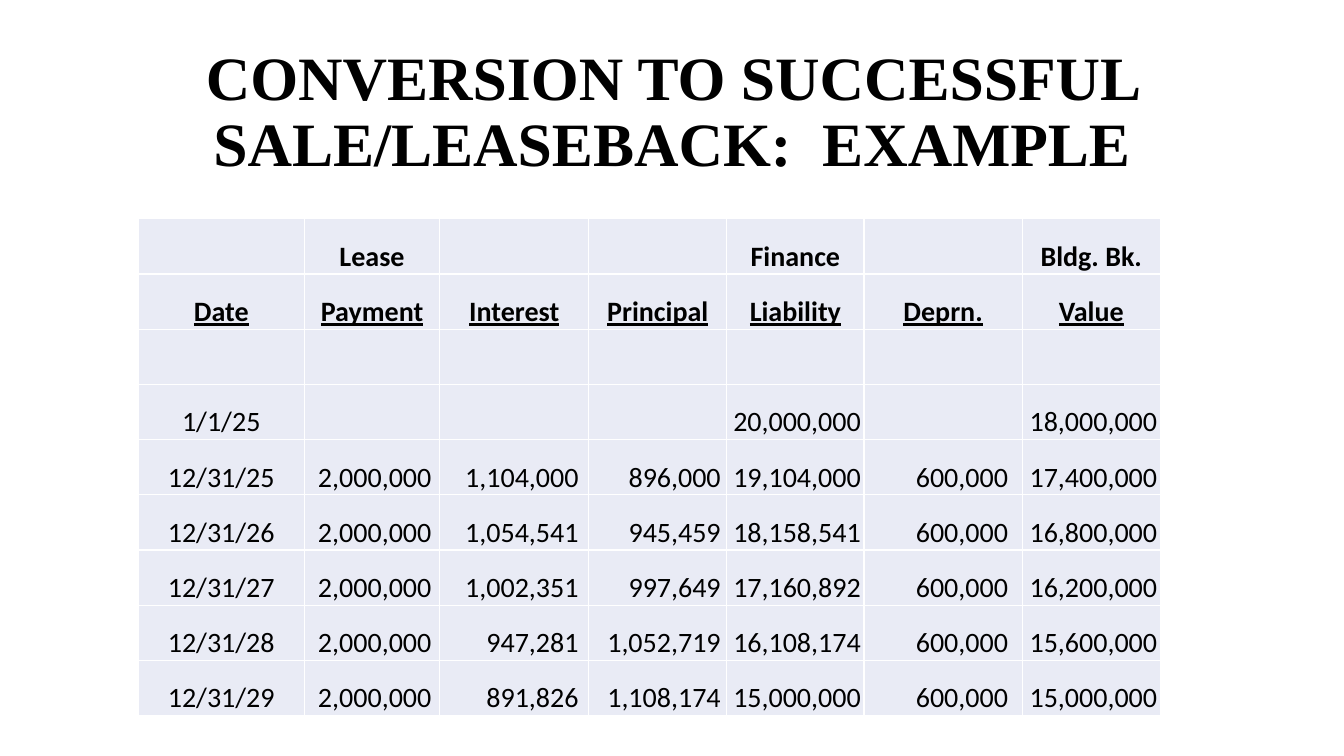
from pptx import Presentation
from pptx.dml.color import RGBColor
from pptx.enum.text import MSO_ANCHOR, PP_ALIGN
from pptx.oxml import parse_xml
from pptx.oxml.ns import nsdecls
from pptx.util import Inches, Pt

HEADS = [
    ["", "Lease", "", "", "Finance", "", "Bldg. Bk."],
    ["Date", "Payment", "Interest", "Principal", "Liability", "Deprn.", "Value"],
    [""] * 7,
]
DATA = [
    ["1/1/25", "", "", "", "20,000,000", "", "18,000,000"],
    ["12/31/25", "2,000,000", "1,104,000", "896,000", "19,104,000", "600,000", "17,400,000"],
    ["12/31/26", "2,000,000", "1,054,541", "945,459", "18,158,541", "600,000", "16,800,000"],
    ["12/31/27", "2,000,000", "1,002,351", "997,649", "17,160,892", "600,000", "16,200,000"],
    ["12/31/28", "2,000,000", "947,281", "1,052,719", "16,108,174", "600,000", "15,600,000"],
    ["12/31/29", "2,000,000", "891,826", "1,108,174", "15,000,000", "600,000", "15,000,000"],
]
WIDTHS = [1.65, 1.34, 1.48, 1.37, 1.36, 1.57, 1.37]
# Right margins that line up the figures in each column
PADS = [0.01, 0.08, 0.1, 0.06, 0.03, 0.14, 0.03]


def color(code):
    return RGBColor.from_string(code)


def write(frame, text, font="Calibri", size=20, ink="000000", bold=False,
          under=False, align=PP_ALIGN.CENTER, space=1.0):
    para = frame.paragraphs[0]
    para.alignment = align
    para.line_spacing = space
    run = para.add_run()
    run.text = text
    style = run.font
    style.name, style.size, style.bold = font, Pt(size), bold
    style.underline = under
    style.color.rgb = color(ink)


class Board:
    fill = "E9EBF5"
    rule = "FFFFFF"

    def __init__(self, slide):
        self.slide = slide

    def title(self, text, left, top, width, height):
        box = self.slide.shapes.add_textbox(
            Inches(left), Inches(top), Inches(width), Inches(height))
        frame = box.text_frame
        frame.word_wrap = True
        frame.vertical_anchor = MSO_ANCHOR.MIDDLE
        write(frame, text, font="Times New Roman", size=44, bold=True, space=0.9)

    def cell(self, cell, pad):
        cell.margin_left = cell.margin_top = Inches(0.01)
        cell.margin_right, cell.margin_bottom = Inches(pad), 0
        cell.vertical_anchor = MSO_ANCHOR.BOTTOM
        props = cell._tc.get_or_add_tcPr()
        for side in "LRTB":
            props.append(parse_xml(
                f'<a:ln{side} {nsdecls("a")} w="{Pt(1)}"><a:solidFill>'
                f'<a:srgbClr val="{self.rule}"/></a:solidFill></a:ln{side}>'))
        cell.fill.solid()
        cell.fill.fore_color.rgb = color(self.fill)

    def table(self, heads, data, left, top, height):
        rows = heads + data
        table = self.slide.shapes.add_table(
            len(rows), len(WIDTHS), Inches(left), Inches(top),
            Inches(sum(WIDTHS)), Inches(height)).table
        table.first_row = table.horz_banding = False
        for col, width in zip(table.columns, WIDTHS):
            col.width = Inches(width)
        for r, row in enumerate(rows):
            head = r < len(heads)
            for c, text in enumerate(row):
                cell = table.cell(r, c)
                mid = head or c == 0
                self.cell(cell, 0.01 if mid else PADS[c])
                if text:
                    write(cell.text_frame, text, bold=head, under=r == 1,
                          align=PP_ALIGN.CENTER if mid else PP_ALIGN.RIGHT)


def main():
    deck = Presentation()
    deck.slide_width, deck.slide_height = Inches(13.33), Inches(7.5)
    board = Board(deck.slides.add_slide(deck.slide_layouts[6]))

    # Heading
    board.title("CONVERSION TO SUCCESSFUL SALE/LEASEBACK:  EXAMPLE",
                0.92, 0.4, 11.5, 1.45)
    # Lease schedule
    board.table(HEADS, DATA, 1.37, 2.17, 4.93)

    deck.save("out.pptx")


if __name__ == "__main__":
    main()
